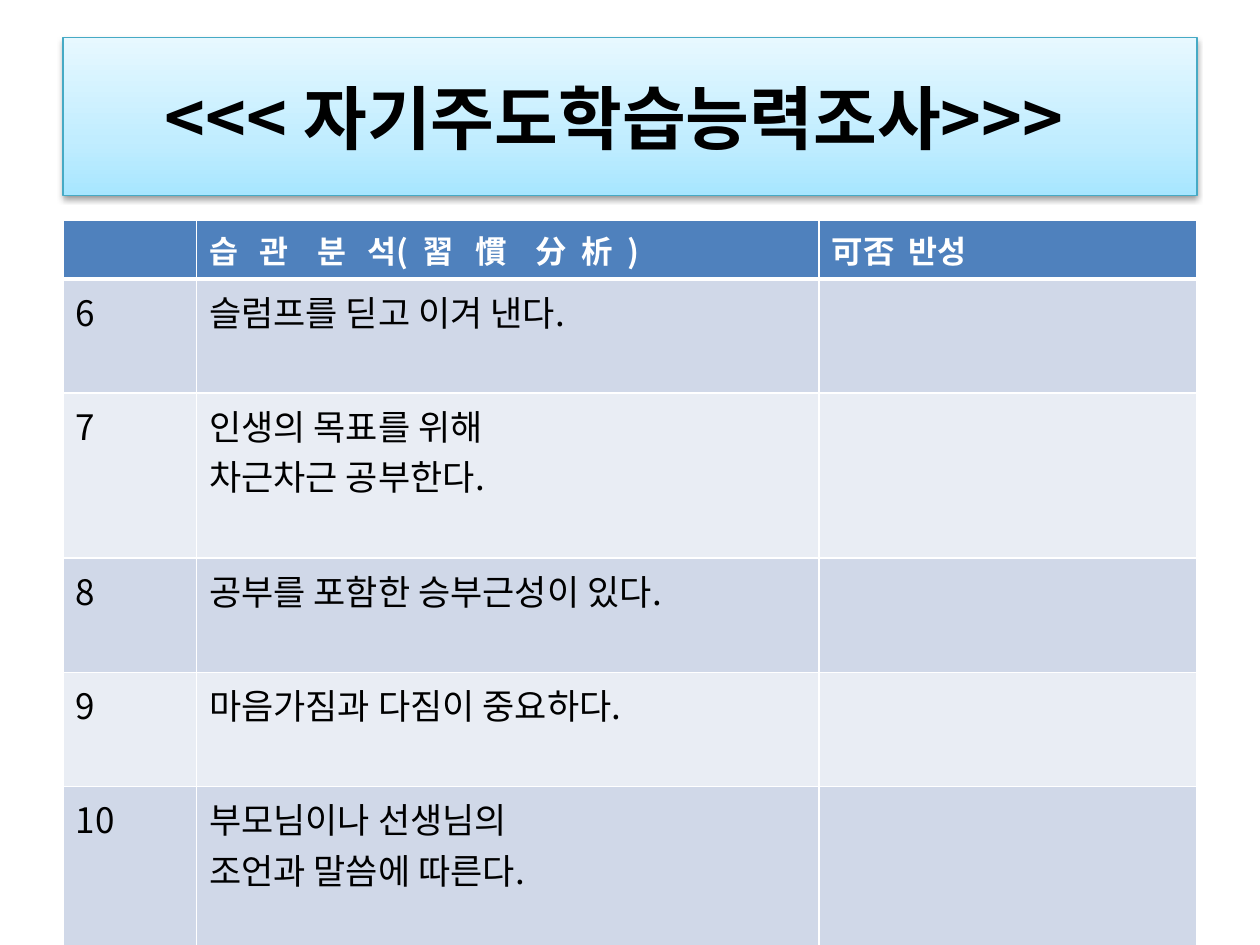
from typing import NamedTuple

from lxml.etree import SubElement
from pptx import Presentation
from pptx.dml.color import RGBColor
from pptx.enum.shapes import MSO_SHAPE as Preset
from pptx.enum.text import MSO_ANCHOR as Anchor, PP_ALIGN as Align
from pptx.oxml import parse_xml
from pptx.oxml.ns import nsdecls, qn
from pptx.util import Cm, Pt

FONT = "Noto Sans CJK KR"
LEFT, WIDTH = 1.27, 22.86
COLUMN_WIDTHS = (2.69, 12.55, 7.62)
HEADER_FILL = "4F81BD"
BAND_FILLS = ("D0D8E8", "E9EDF4")
TITLE_FORMAT = {"size": Pt(39.6), "bold": True}
HEADER_FORMAT = {"size": Pt(18), "bold": True}
BODY_FORMAT = {"size": Pt(20), "bold": False}
GRADIENT_STOPS = ((0, "A7E6FF"), (35, "C1EDFF"), (100, "E7F8FF"))


class Row(NamedTuple):
    height: float
    texts: tuple[str, str, str]


HEADER = Row(1.17, ("", "습   관    분   석(  習   慣    分  析  )", "可否  반성"))
HABITS = (
    Row(2.3, ("6", "슬럼프를 딛고 이겨 낸다.", "")),
    Row(3.33, ("7", "인생의 목표를 위해\n차근차근 공부한다. ", "")),
    Row(2.3, ("8", "공부를 포함한 승부근성이 있다.", "")),
    Row(2.3, ("9", "마음가짐과 다짐이 중요하다.", "")),
    Row(3.33, ("10", "부모님이나 선생님의\n조언과 말씀에 따른다.", "")),
)


def rgb(color: str) -> RGBColor:
    return RGBColor.from_string(color)


def write_text(frame, text: str, color: str, formats: dict) -> None:
    frame.text = text
    for paragraph in frame.paragraphs:
        for run in paragraph.runs:
            for name, value in formats.items():
                setattr(run.font, name, value)
            run.font.name = FONT
            run.font.color.rgb = rgb(color)
            SubElement(run.font._element, qn("a:ea"), typeface=FONT)


def add_banner(slide, text: str) -> None:
    shape = slide.shapes.add_shape(Preset.RECTANGLE, Cm(LEFT), Cm(0.76), Cm(WIDTH), Cm(3.18))
    shape.line.color.rgb = rgb("46AAC5")
    shape.line.width = Pt(0.75)
    stops = "".join(
        f'<a:gs pos="{position * 1000}"><a:srgbClr val="{color}"/></a:gs>'
        for position, color in GRADIENT_STOPS
    )
    properties = shape._element.spPr
    properties.find(qn("a:prstGeom")).addnext(parse_xml(
        f'<a:gradFill {nsdecls("a")} rotWithShape="1"><a:gsLst>{stops}</a:gsLst>'
        '<a:lin ang="16200000" scaled="1"/></a:gradFill>'
    ))
    properties.append(parse_xml(
        f'<a:effectLst {nsdecls("a")}><a:outerShdw blurRad="{Pt(3.1)}" dist="{Pt(1.6)}"'
        ' dir="5400000" rotWithShape="0"><a:srgbClr val="000000"><a:alpha val="38000"/>'
        '</a:srgbClr></a:outerShdw></a:effectLst>'
    ))
    shape.text_frame.word_wrap = True
    shape.text_frame.vertical_anchor = Anchor.MIDDLE
    write_text(shape.text_frame, text, "000000", TITLE_FORMAT)
    shape.text_frame.paragraphs[0].alignment = Align.CENTER


def set_borders(cell, widths: dict[str, float]) -> None:
    for side, width in widths.items():
        cell._tc.get_or_add_tcPr().append(parse_xml(
            f'<a:ln{side} {nsdecls("a")} w="{Pt(width)}"><a:solidFill>'
            f'<a:srgbClr val="FFFFFF"/></a:solidFill></a:ln{side}>'
        ))


def fill_row(table, index: int, row: Row, fill: str, color: str, formats: dict) -> None:
    table.rows[index].height = Cm(row.height)
    widths = {"L": 1, "R": 1, "T": 3 if index == 1 else 1, "B": 3 if index == 0 else 1}
    for cell, text in zip(table.rows[index].cells, row.texts):
        set_borders(cell, widths)
        cell.fill.solid()
        cell.fill.fore_color.rgb = rgb(fill)
        write_text(cell.text_frame, text, color, formats)


def add_habit_table(slide) -> None:
    height = HEADER.height + sum(row.height for row in HABITS)
    table = slide.shapes.add_table(
        len(HABITS) + 1, len(COLUMN_WIDTHS), Cm(LEFT), Cm(4.45), Cm(WIDTH), Cm(height)
    ).table
    for column, width in zip(table.columns, COLUMN_WIDTHS):
        column.width = Cm(width)
    fill_row(table, 0, HEADER, HEADER_FILL, "FFFFFF", HEADER_FORMAT)
    for index, row in enumerate(HABITS, start=1):
        fill_row(table, index, row, BAND_FILLS[(index - 1) % 2], "000000", BODY_FORMAT)


def main() -> None:
    presentation = Presentation()
    presentation.slide_width, presentation.slide_height = Cm(25.4), Cm(19.05)
    slide = presentation.slides.add_slide(presentation.slide_layouts[6])
    add_banner(slide, "<<< 자기주도학습능력조사>>>  ")
    add_habit_table(slide)
    presentation.save("out.pptx")


if __name__ == "__main__":
    main()
